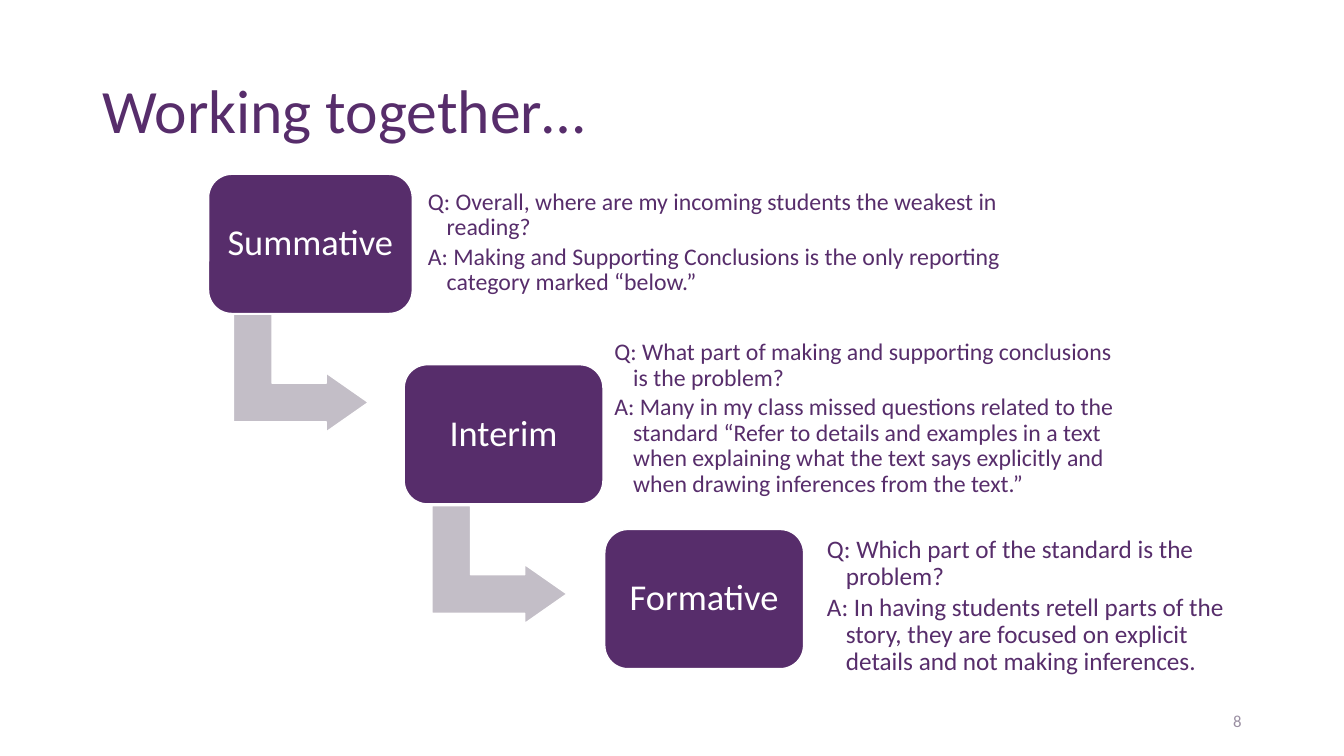
import pptx
import pptx.util
import pptx.dml.color
import pptx.enum.shapes
import pptx.enum.text
import lxml.etree
from dataclasses import dataclass

Pt = pptx.util.Pt
Shape = pptx.enum.shapes.MSO_SHAPE
Align = pptx.enum.text.PP_ALIGN
Anchor = pptx.enum.text.MSO_ANCHOR


@dataclass(frozen=True)
class Theme:
    face: str = "Calibri"
    plum: str = "572D6B"
    mist: str = "C3BEC7"
    gray: str = "9A8FA2"
    white: str = "FFFFFF"
    head: float = 44
    label: float = 26
    note: float = 17
    last: float = 18
    foot: float = 12


class Deck:
    def __init__(self, theme):
        self.theme = theme
        self.show = pptx.Presentation()
        self.show.slide_width = Pt(960)
        self.show.slide_height = Pt(540)
        self.slide = self.show.slides.add_slide(self.show.slide_layouts[5])

    def color(self, code):
        return pptx.dml.color.RGBColor.from_string(code)

    def style(self, para, size, code, align=Align.LEFT, after=0, lead=0.9):
        para.font.name = self.theme.face
        para.font.size = Pt(size)
        para.font.color.rgb = self.color(code)
        para.alignment = align
        para.line_spacing = lead
        para.space_before = Pt(0)
        para.space_after = Pt(after)

    def frame(self, shape, inset):
        frame = shape.text_frame
        frame.word_wrap = True
        frame.auto_size = pptx.enum.text.MSO_AUTO_SIZE.NONE
        frame.vertical_anchor = Anchor.MIDDLE
        frame.margin_left = frame.margin_right = Pt(inset)
        frame.margin_top = frame.margin_bottom = Pt(inset)
        return frame

    def title(self, text, left, top, width, height):
        shape = self.slide.shapes.title
        shape.left, shape.top = Pt(left), Pt(top)
        shape.width, shape.height = Pt(width), Pt(height)
        frame = self.frame(shape, 7.2)
        frame.text = text
        self.style(frame.paragraphs[0], self.theme.head, self.theme.plum)

    def solid(self, kind, place, code, ratios):
        shape = self.slide.shapes.add_shape(kind, *map(Pt, place))
        shape.shadow.inherit = False
        shape.fill.solid()
        shape.fill.fore_color.rgb = self.color(code)
        shape.line.color.rgb = self.color(self.theme.white)
        shape.line.width = Pt(1)
        for index, ratio in enumerate(ratios):
            shape.adjustments[index] = ratio
        return shape

    def box(self, text, place):
        shape = self.solid(Shape.ROUNDED_RECTANGLE, place, self.theme.plum, [0.167])
        frame = self.frame(shape, 5)
        frame.text = text
        self.style(frame.paragraphs[0], self.theme.label, self.theme.white, Align.CENTER)

    def arrow(self, place):
        ratios = [0.328, 0.25, 0.358]
        shape = self.solid(Shape.BENT_UP_ARROW, place, self.theme.mist, ratios)
        shape.rotation = 90

    def note(self, lines, place, size):
        shape = self.slide.shapes.add_textbox(*map(Pt, place))
        frame = self.frame(shape, 6.8)
        frame.text = "\n".join(lines)
        for para in frame.paragraphs:
            self.style(para, size, self.theme.plum, after=size * 0.15)
            props = para._p.get_or_add_pPr()
            props.set("marL", str(Pt(13.5)))
            props.set("indent", str(-Pt(13.5)))

    def number(self, text, place):
        shape = self.slide.shapes.add_textbox(*map(Pt, place))
        para = self.frame(shape, 7.2).paragraphs[0]
        para.text = text
        self.style(para, self.theme.foot, self.theme.gray, Align.RIGHT, lead=1.0)


def main():
    theme = Theme()
    deck = Deck(theme)
    deck.title("Working together…", 66, 28.8, 828, 104.4)
    steps = [
        ("Summative", (149, 124.5, 145.5), (298.8, 133.2, 483.8, 80.6), theme.note, [
            "Q: Overall, where are my incoming students the weakest in reading?",
            "A: Making and Supporting Conclusions is the only reporting category marked “below.”",
        ]),
        ("Interim", (288.7, 260.5, 142), (432, 223.2, 378.7, 151.9), theme.note, [
            "Q: What part of making and supporting conclusions is the problem?",
            "A: Many in my class missed questions related to the standard “Refer to details "
            "and examples in a text when explaining what the text says explicitly and "
            "when drawing inferences from the text.”",
        ]),
        ("Formative", (432, 378.2, 142), (583.9, 365.8, 310.3, 134.6), theme.last, [
            "Q: Which part of the standard is the problem?",
            "A: In having students retell parts of the story, they are focused on explicit "
            "details and not making inferences.",
        ]),
    ]
    turns = [(172.8, 218.2), (314.6, 355)]
    for index, (name, (left, top, width), area, size, lines) in enumerate(steps):
        if index < len(turns):
            deck.arrow((*turns[index], 84.2, 96.5))
        deck.box(name, (left, top, width, 99.4))
        deck.note(lines, area, size)
    deck.number("8", (678, 500.4, 216, 28.8))
    deck.show.save("out.pptx")


if __name__ == "__main__":
    main()
